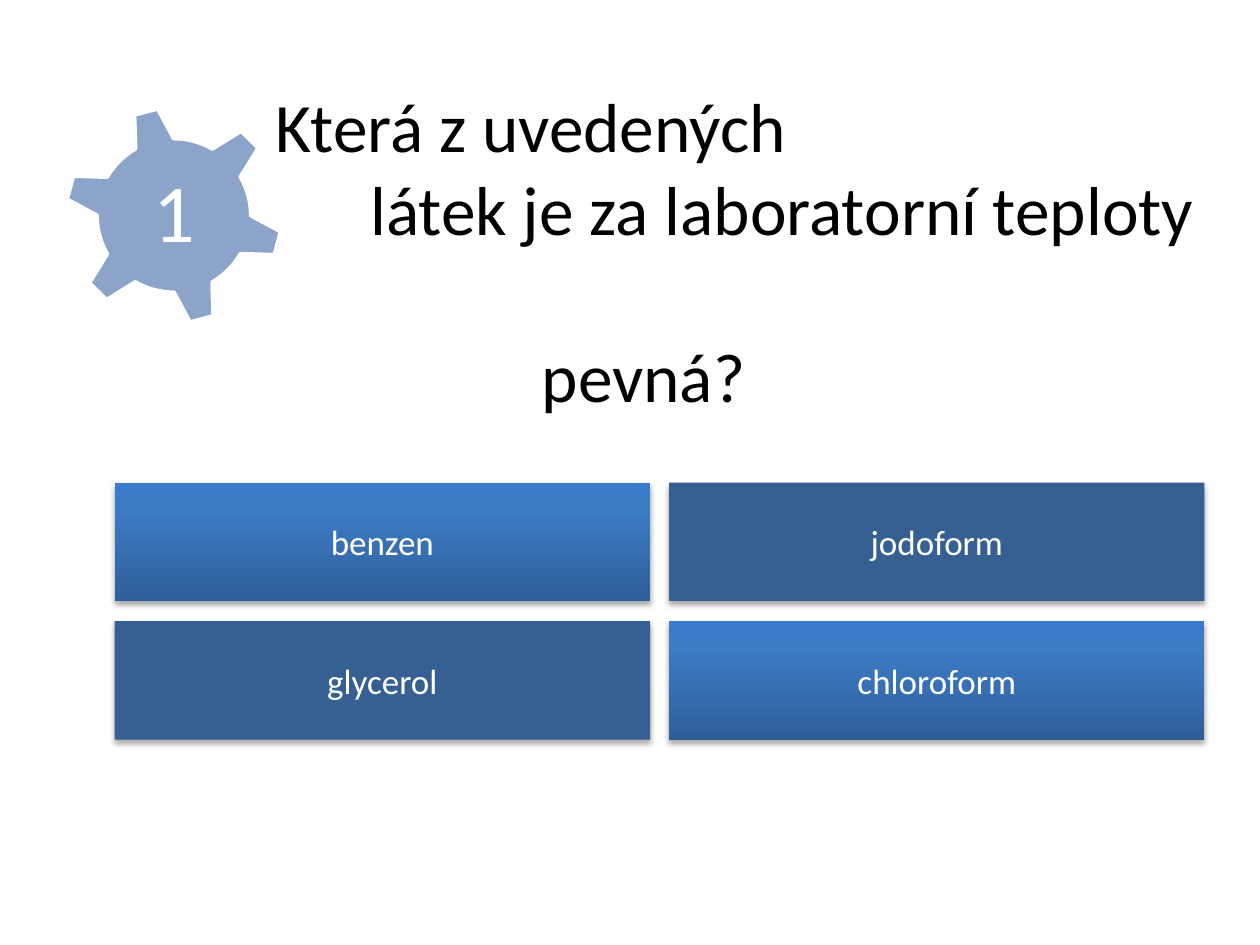
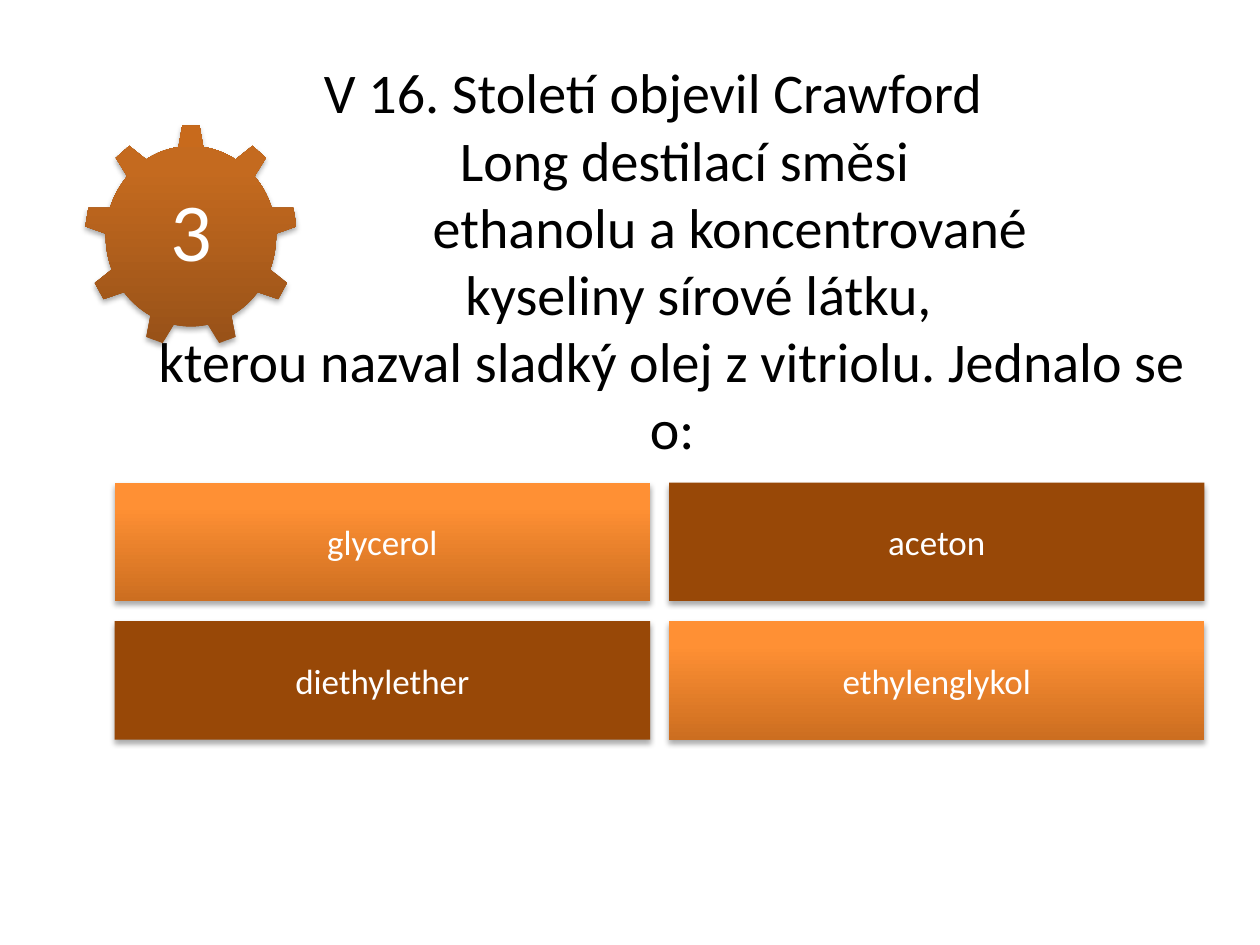
from copy import deepcopy

from lxml import etree
from pptx import Presentation
from pptx.dml.color import RGBColor
from pptx.enum.shapes import MSO_SHAPE
from pptx.enum.text import MSO_ANCHOR, MSO_AUTO_SIZE, PP_ALIGN
from pptx.oxml.ns import qn
from pptx.util import Inches, Pt

LEFT, CENTER = PP_ALIGN.LEFT, PP_ALIGN.CENTER
MIDDLE = MSO_ANCHOR.MIDDLE
NO_FIT = MSO_AUTO_SIZE.NONE
RECTANGLE = MSO_SHAPE.RECTANGLE
GEAR_6, GEAR_9 = MSO_SHAPE.GEAR_6, MSO_SHAPE.GEAR_9

FONT = "Calibri"
BLACK, WHITE = "000000", "FFFFFF"

# Answer grid in inches
GRID_LEFT, GRID_TOP = 0.91, 3.83
CELL_WIDTH, CELL_HEIGHT = 4.25, 0.94
COLUMN_STEP, ROW_STEP = 4.4, 1.1

# Title lines: text, left indent, right indent (inches), space before (points)
questions = [
    {
        "title_box": (2.09, 0.92, 7.6, 2.13),
        "title_size": 39.6,
        "align": LEFT,
        "lines": [
            ("Která z uvedených", 0, 0, 0),
            ("látek je za laboratorní teploty", 0.75, 0, 0),
            ("pevná?", 2.11, 0, 48),
        ],
        "number": "1",
        "gear": GEAR_6,
        "gear_box": (0.51, 0.84, 1.74, 1.74),
        "gear_rotation": 345,
        "gear_fill": ["8CA4C9"],
        "gear_line": WHITE,
        "number_box": (0.89, 1.22, 0.98, 0.98),
        "answers": ["benzen", "jodoform", "glycerol", "chloroform"],
        "light": ["2F5F99", "3D7CC7", "3A7CCB"],
        "dark": ["376092"],
    },
    {
        "title_box": (0.75, 0.68, 9, 2.76),
        "title_size": 32,
        "align": CENTER,
        "lines": [
            ("V\u00a016. Století objevil Crawford", 0, 0.13, 0),
            ("Long destilací směsi", 0.37, 0, 0),
            ("ethanolu a koncentrované", 1.09, 0, 0),
            ("kyseliny sírové látku,", 0.59, 0, 0),
            ("kterou nazval sladký olej z\u00a0vitriolu. Jednalo se o:", 0.3, 0.13, 0),
        ],
        "number": "3",
        "gear": GEAR_9,
        "gear_box": (0.67, 0.99, 1.69, 1.77),
        "gear_rotation": 0,
        "gear_fill": ["975118", "C46A1F", "C86A1C"],
        "gear_line": None,
        "number_box": (1.01, 1.41, 1.01, 0.91),
        "answers": ["glycerol", "aceton", "diethylether", "ethylenglykol"],
        "light": ["CC6E20", "FF9034", "FF9136"],
        "dark": ["984807"],
    },
]


def paint(shape, colours, line_colour=None):
    """Fill with one colour, or three from bottom to top; unlined shapes get a shadow."""
    shape.shadow.inherit = False
    if len(colours) == 1:
        shape.fill.solid()
        shape.fill.fore_color.rgb = RGBColor.from_string(colours[0])
    else:
        shape.fill.gradient()
        shape.fill.gradient_angle = 90
        stop_list = shape._element.spPr.find(".//" + qn("a:gsLst"))
        stop_list.append(deepcopy(stop_list[0]))
        for stop, position, colour in zip(shape.fill.gradient_stops, (0, 0.8, 1), colours):
            stop.position = position
            stop.color.rgb = RGBColor.from_string(colour)
    if line_colour:
        shape.line.color.rgb = RGBColor.from_string(line_colour)
        shape.line.width = Pt(2)
        return
    shape.line.fill.background()
    effects = shape._element.spPr.find(qn("a:effectLst"))
    shadow = etree.SubElement(effects, qn("a:outerShdw"), blurRad=str(Pt(3.1)),
                              dist=str(Pt(1.8)), dir="5400000", rotWithShape="0")
    shadow_colour = etree.SubElement(shadow, qn("a:srgbClr"), val=BLACK)
    etree.SubElement(shadow_colour, qn("a:alpha"), val="35000")


def style_text(text_frame, size, colour, align):
    text_frame.word_wrap = True
    text_frame.auto_size = NO_FIT
    text_frame.vertical_anchor = MIDDLE
    for paragraph in text_frame.paragraphs:
        paragraph.alignment = align
        for run in paragraph.runs:
            run.font.name = FONT
            run.font.size = Pt(size)
            run.font.color.rgb = RGBColor.from_string(colour)


presentation = Presentation()
presentation.slide_width, presentation.slide_height = Inches(10), Inches(7.5)
title_only = presentation.slide_layouts[5]

for question in questions:
    slide = presentation.slides.add_slide(title_only)

    # Question in the title placeholder
    title = slide.shapes.title
    title.left, title.top, title.width, title.height = map(Inches, question["title_box"])
    title.text_frame.text = "\n".join(line[0] for line in question["lines"])
    style_text(title.text_frame, question["title_size"], BLACK, question["align"])
    for paragraph, line in zip(title.text_frame.paragraphs, question["lines"]):
        _, left_indent, right_indent, space_before = line
        properties = paragraph._p.get_or_add_pPr()
        properties.set("marL", str(Inches(left_indent)))
        properties.set("marR", str(Inches(right_indent)))
        paragraph.space_before = Pt(space_before)

    # Answers on a grid of two by two, light and dark in turn
    for index, answer in enumerate(question["answers"]):
        row, column = divmod(index, 2)
        box = slide.shapes.add_shape(
            RECTANGLE,
            Inches(GRID_LEFT + column * COLUMN_STEP), Inches(GRID_TOP + row * ROW_STEP),
            Inches(CELL_WIDTH), Inches(CELL_HEIGHT))
        paint(box, question["light"] if row == column else question["dark"])
        box.text_frame.text = answer
        style_text(box.text_frame, 20, WHITE, CENTER)

    # Gear with the question number
    gear = slide.shapes.add_shape(question["gear"], *map(Inches, question["gear_box"]))
    gear.rotation = question["gear_rotation"]
    paint(gear, question["gear_fill"], question["gear_line"])
    number = slide.shapes.add_textbox(*map(Inches, question["number_box"])).text_frame
    number.margin_left = number.margin_right = Inches(0.07)
    number.margin_top = number.margin_bottom = Inches(0.07)
    number.text = question["number"]
    style_text(number, 47, WHITE, CENTER)
    number.paragraphs[0].line_spacing = 0.9

presentation.save("out.pptx")
